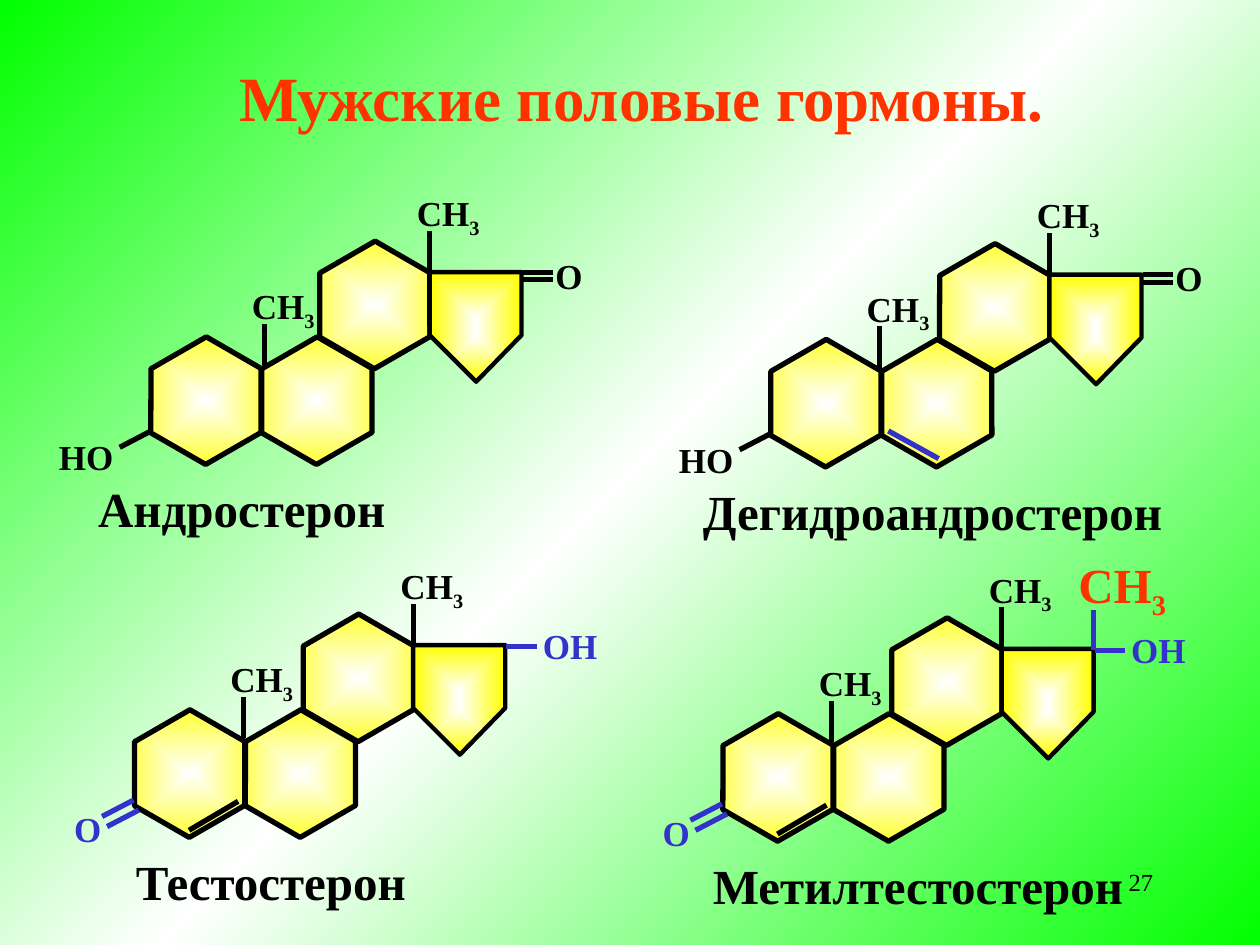
from lxml import etree
from pptx import Presentation
from pptx.dml.color import RGBColor
from pptx.enum.shapes import MSO_CONNECTOR, MSO_SHAPE
from pptx.enum.text import MSO_ANCHOR, MSO_AUTO_SIZE, PP_ALIGN
from pptx.oxml import parse_xml
from pptx.oxml.ns import nsdecls, qn
from pptx.util import Inches, Pt

HEXAGON, STRAIGHT = MSO_SHAPE.HEXAGON, MSO_CONNECTOR.STRAIGHT
MIDDLE, TOP = MSO_ANCHOR.MIDDLE, MSO_ANCHOR.TOP
LEFT, CENTER, RIGHT = PP_ALIGN.LEFT, PP_ALIGN.CENTER, PP_ALIGN.RIGHT
NO_AUTOSIZE = MSO_AUTO_SIZE.NONE
FONT = "Times New Roman"
COLORS = {"black": "000000", "blue": "3333CC", "red": "FF3300",
          "green": "00FF00", "yellow": "FFFF00", "white": "FFFFFF"}
WIDTHS = {"О": 0.42, "НО": 0.63, "ОН": 0.63, "СН3": 0.71}
RINGS = [(0, 0.76), (0.88, 0.76), (1.34, 0)]
PENTAGON = [(2.65, 1.05), (3.01, 0.68), (3.01, 0.18), (2.28, 0.18), (2.28, 0.68)]
MOLECULES = [
    {"left": 1.13, "top": 1.98, "name": "Андростерон", "name_left": -0.45,
     "name_width": 2.48, "methyl_left": 0.77, "ketone": True},
    {"left": 6.05, "top": 2, "name": "Дегидроандростерон", "name_left": -0.57,
     "name_width": 3.85, "methyl_left": 0.73, "ketone": True},
    {"left": 1, "top": 4.94, "name": "Тестостерон", "name_left": -0.02,
     "name_width": 2.36, "methyl_left": 0.73, "ketone": False},
    {"left": 5.67, "top": 4.97, "name": "Метилтестостерон", "name_left": -0.11,
     "name_width": 3.46, "methyl_left": 0.73, "ketone": False},
]


def set_gradient(parent, names, shade):
    """Replace the solid fill of parent by evenly spaced gradient stops."""
    solid = parent.find(qn("a:solidFill"))
    stops = "".join(
        f'<a:gs pos="{index * 100000 // (len(names) - 1)}">'
        f'<a:srgbClr val="{COLORS[name]}"/></a:gs>'
        for index, name in enumerate(names))
    parent.replace(solid, parse_xml(
        f'<a:gradFill rotWithShape="1" {nsdecls("a")}>'
        f'<a:gsLst>{stops}</a:gsLst>{shade}</a:gradFill>'))


def write(frame, pieces, size, color="black", bold=True, align=LEFT, anchor=TOP, wrap=False):
    """Write one paragraph; a piece that is a digit suffix becomes a subscript."""
    for key, value in {"auto_size": NO_AUTOSIZE, "word_wrap": wrap,
                       "vertical_anchor": anchor}.items():
        setattr(frame, key, value)
    para = frame.paragraphs[0]
    para.alignment = align
    for index, piece in enumerate(pieces):
        span = para.add_run()
        span.text = piece
        for key, value in {"name": FONT, "size": Pt(size), "bold": bold}.items():
            setattr(span.font, key, value)
        span.font.color.rgb = RGBColor.from_string(COLORS[color])
        if index:
            span.font._element.set("baseline", "-25000")


def add_text(page, left, top, width, height, pieces, size, **style):
    """Add a text box with one paragraph."""
    box = page.shapes.add_textbox(Inches(left), Inches(top), Inches(width), Inches(height))
    write(box.text_frame, pieces, size, **style)


def add_atom(page, box, left, top, label, color="black"):
    """Label an atom group at an offset from the molecule box."""
    pieces = ["СН", "3"] if label == "СН3" else [label]
    add_text(page, box["left"] + left, box["top"] + top, WIDTHS[label], 0.43,
             pieces, 20, color=color)


def add_bond(page, box, start, end, color="black"):
    """Draw a bond between two offsets from the molecule box."""
    ends = [Inches(box[side] + offset) for point in (start, end)
            for side, offset in zip(("left", "top"), point)]
    bond = page.shapes.add_connector(STRAIGHT, *ends)
    bond.line.width = Pt(3)
    bond.line.color.rgb = RGBColor.from_string(COLORS[color])
    etree.SubElement(bond._element.spPr, qn("a:effectLst"))


def format_ring(ring, width, route):
    """Give a ring its outline and its white to yellow fill."""
    ring.shadow.inherit = False
    ring.line.width = Pt(width)
    ring.line.color.rgb = RGBColor.from_string(COLORS["black"])
    ring.fill.solid()
    set_gradient(ring._element.spPr, ["white", "yellow"],
                 f'<a:path path="{route}"><a:fillToRect l="50000" t="50000" '
                 'r="50000" b="50000"/></a:path>')


def add_skeleton(page, box):
    """Draw the four fused rings and the two methyl groups."""
    for left, top in RINGS:
        ring = page.shapes.add_shape(HEXAGON, Inches(box["left"] + left),
                                     Inches(box["top"] + top), Inches(1.01), Inches(0.88))
        ring.rotation = 30
        ring.adjustments[0], ring.adjustments[1] = 0.289, 1.155
        format_ring(ring, 3, "shape")
    corners = [(Inches(box["left"] + x), Inches(box["top"] + y)) for x, y in PENTAGON]
    outline = page.shapes.build_freeform(*corners[0])
    outline.add_line_segments(corners[1:], close=True)
    format_ring(outline.convert_to_shape(), 2.5, "rect")
    for left, top, shift in ((box["methyl_left"], 0.23, 0.2), (2.08, -0.51, 0.2)):
        add_bond(page, box, (left + shift, top + 0.69), (left + shift, top + 0.36))
        add_atom(page, box, left, top, "СН3")


def add_ketone_groups(page, box):
    """Add the hydroxyl on the left and the oxygen on the right."""
    add_bond(page, box, (0.07, 1.44), (-0.18, 1.57))
    add_atom(page, box, -0.76, 1.43, "НО")
    for top in (0.18, 0.24):
        add_bond(page, box, (3.26, top), (3.02, top))
    add_atom(page, box, 3.18, -0.01, "О")


def add_alcohol_groups(page, box):
    """Add the oxygen on the left, the ring double bond and the hydroxyl."""
    for left, top in ((0.06, 1.41), (0.1, 1.49)):
        add_bond(page, box, (left, top), (left - 0.25, top + 0.13), "blue")
    add_atom(page, box, -0.51, 1.42, "О", "blue")
    add_bond(page, box, (0.5, 1.65), (0.89, 1.42))
    add_bond(page, box, (3.26, 0.19), (3.02, 0.19), "blue")
    add_atom(page, box, 3.21, -0.03, "ОН", "blue")


def add_molecule(page, box):
    """Draw one hormone with its name."""
    add_skeleton(page, box)
    add_groups = add_ketone_groups if box["ketone"] else add_alcohol_groups
    add_groups(page, box)
    add_text(page, box["left"] + box["name_left"], box["top"] + 1.77,
             box["name_width"], 0.57, [box["name"]], 28)


def add_title(page):
    """Place and format the title."""
    title = page.shapes.title
    for key, value in {"left": 0.84, "top": 0.3, "width": 8.5, "height": 0.93}.items():
        setattr(title, key, Inches(value))
    write(title.text_frame, ["Мужские половые гормоны."], 36, color="red",
          align=CENTER, anchor=MIDDLE, wrap=True)


def main():
    """Build the slide and save the deck."""
    deck = Presentation()
    deck.slide_width, deck.slide_height = Inches(10), Inches(7.5)
    page = deck.slides.add_slide(deck.slide_layouts[5])
    page.background.fill.solid()
    set_gradient(page.element.find(".//" + qn("p:bgPr")), ["green", "white", "green"],
                 '<a:lin ang="2700000" scaled="1"/>')
    add_title(page)
    for box in MOLECULES:
        add_molecule(page, box)
    dehydro, methylated = MOLECULES[1], MOLECULES[3]
    add_bond(page, dehydro, (1, 1.42), (1.4, 1.64), "blue")
    add_bond(page, methylated, (3.01, 0.19), (3.01, -0.13), "blue")
    add_text(page, methylated["left"] + 2.79, methylated["top"] - 0.62, 0.92, 0.57,
             ["СН", "3"], 28, color="red")
    add_text(page, 7.17, 6.83, 2.08, 0.5, ["27"], 14, bold=False, align=RIGHT, wrap=True)
    deck.save("out.pptx")


if __name__ == "__main__":
    main()
